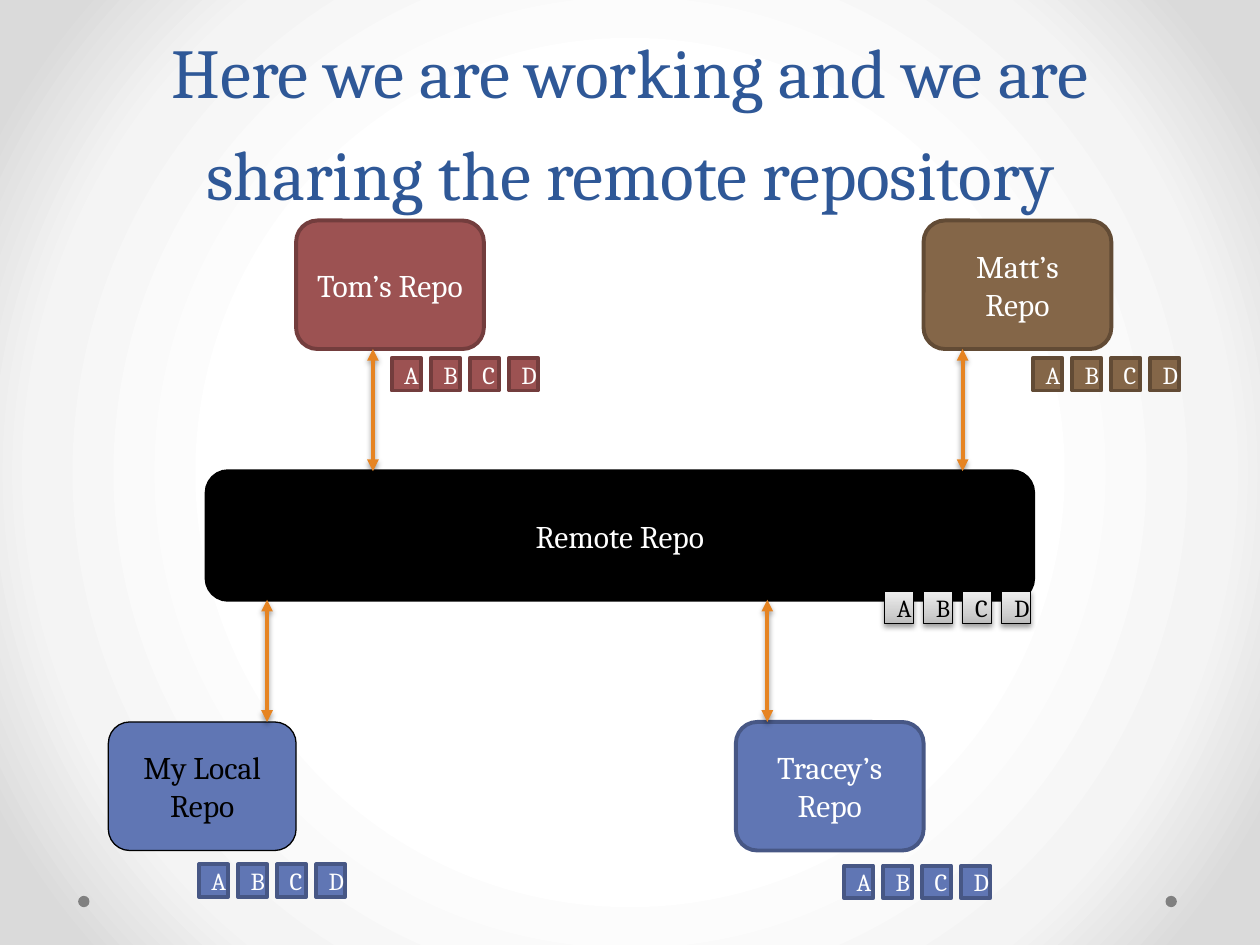
import lxml.etree
import pptx
import pptx.dml.color
import pptx.enum.shapes
import pptx.enum.text
import pptx.oxml.ns
import pptx.util

SHAPES = pptx.enum.shapes.MSO_SHAPE
WIDTH, HEIGHT = pptx.util.Inches(10), pptx.util.Inches(7.5)
COLUMNS, ROWS = 100, 75
REPO_W, REPO_H = 14.9, 10.2
REMOTE_BOX = (16.4, 37.4, 65.6, REPO_H)
COMMIT_W, COMMIT_H, COMMIT_STEP = 2.3, 2.6, 3.1
BLUE, RED, BROWN = ("6076B4", "475785"), ("9C5252", "733D3D"), ("846648", "624B35")
BLACK, WHITE, ORANGE = "000000", "FFFFFF", "E68422"
SILVER = [(0, "BDBDBD"), (35, "D1D1D1"), (100, "EEEEEE")]
BACKDROP = [(50, "FFFFFF"), (76, "F4F4F4"), (92, "DADADA")]


def across(columns):
    """Convert grid columns to a length."""
    return round(columns * WIDTH / COLUMNS)


def down(rows):
    """Convert grid rows to a length."""
    return round(rows * HEIGHT / ROWS)


def place(box):
    """Convert a grid box to left, top, width and height."""
    left, top, width, height = box
    return across(left), down(top), across(width), down(height)


def rgb(value):
    """Turn a hex string into a colour."""
    return pptx.dml.color.RGBColor.from_string(value)


def add_node(parent, tag, **attributes):
    """Append a drawing element with the given attributes."""
    node = lxml.etree.SubElement(parent, pptx.oxml.ns.qn(tag))
    for key, value in attributes.items():
        node.set(key, str(value))
    return node


def set_gradient(fill, owner, stops, angle=None):
    """Fill the owner with a linear gradient, or a circular one without an angle."""
    fill.gradient()
    gradient = owner.find(".//" + pptx.oxml.ns.qn("a:gradFill"))
    for child in list(gradient):
        gradient.remove(child)
    stop_list = add_node(gradient, "a:gsLst")
    for share, color in stops:
        add_node(add_node(stop_list, "a:gs", pos=share * 1000), "a:srgbClr", val=color)
    if angle is None:
        circle = add_node(gradient, "a:path", path="circle")
        add_node(circle, "a:fillToRect", l=50000, t=50000, r=50000, b=50000)
    else:
        add_node(gradient, "a:lin", ang=angle * 60000, scaled=0)


def add_shadow(part):
    """Drop a soft shadow below a shape or connector."""
    properties = part._element.spPr
    effects = properties.find(pptx.oxml.ns.qn("a:effectLst"))
    if effects is None:
        effects = add_node(properties, "a:effectLst")
    shadow = add_node(effects, "a:outerShdw", blurRad=pptx.util.Pt(3.1),
                      dist=pptx.util.Pt(1.6), dir=90 * 60000, rotWithShape=0)
    add_node(add_node(shadow, "a:srgbClr", val=BLACK), "a:alpha", val=38000)


def write(part, text, size=18, color=WHITE, anchor="MIDDLE", leading=None):
    """Write centred text into a shape or text box."""
    frame = part.text_frame
    frame.word_wrap = True
    frame.vertical_anchor = pptx.enum.text.MSO_ANCHOR[anchor]
    paragraph = frame.paragraphs[0]
    paragraph.alignment = pptx.enum.text.PP_ALIGN.CENTER
    if leading:
        paragraph.line_spacing = pptx.util.Pt(leading)
    run = paragraph.add_run()
    run.text = text
    run.font.name = "Cambria"
    run.font.size = pptx.util.Pt(size)
    run.font.color.rgb = rgb(color)


def add_block(slide, kind, box, fill, outline=None, weight=2.25):
    """Draw a preset shape with a flat or gradient fill."""
    block = slide.shapes.add_shape(kind, *place(box))
    block.shadow.inherit = False
    if isinstance(fill, str):
        block.fill.solid()
        block.fill.fore_color.rgb = rgb(fill)
    else:
        set_gradient(block.fill, block._element, fill, 270)
    if outline:
        block.line.color.rgb = rgb(outline)
        block.line.width = pptx.util.Pt(weight)
    else:
        block.line.fill.background()
    return block


def add_backdrop(slide):
    """Paint the background and the two corner dots."""
    set_gradient(slide.background.fill, slide._element, BACKDROP)
    for left in (6.2, 92.5):
        add_block(slide, SHAPES.OVAL, (left, 71.1, 0.9, 0.9), "808080")


def add_title(slide, box, text):
    """Write the slide title."""
    title = slide.shapes.add_textbox(*place(box))
    write(title, text, size=40, color="2F5897", anchor="BOTTOM", leading=58)


def add_commits(slide, left, top, fill, outline, weight=2.25, color=WHITE, shaded=False):
    """Draw the row of commits from a top left corner."""
    for index, letter in enumerate("ABCD"):
        box = (left + index * COMMIT_STEP, top, COMMIT_W, COMMIT_H)
        commit = add_block(slide, SHAPES.RECTANGLE, box, fill, outline, weight)
        write(commit, letter, size=14, color=color)
        if shaded:
            add_shadow(commit)


def add_sync_arrow(slide, column, start, end):
    """Draw a vertical double-headed arrow between two rows."""
    arrow = slide.shapes.add_connector(
        pptx.enum.shapes.MSO_CONNECTOR.STRAIGHT,
        across(column), down(start), across(column), down(end))
    arrow.line.color.rgb = rgb(ORANGE)
    arrow.line.width = pptx.util.Pt(2.25)
    line = arrow.line._get_or_add_ln()
    for end_tag in ("a:headEnd", "a:tailEnd"):
        add_node(line, end_tag, type="triangle")
    add_shadow(arrow)


def add_remote(slide, box):
    """Draw the shared repository with its commits."""
    left, top, _, _ = box
    remote = add_block(slide, SHAPES.ROUNDED_RECTANGLE, box, BLACK, BLACK)
    write(remote, "Remote Repo")
    add_commits(slide, left + 53.8, top + 9.5, SILVER, BLACK, 0.75, BLACK, True)


def add_repo(slide, box, name, palette, commit_offset, arrow_offset, own=False):
    """Draw a person's repository, its commits and its arrow to the remote."""
    left, top, _, height = box
    fill, outline = palette
    border, weight, color = (BLACK, 0.75, BLACK) if own else (outline, 2.25, WHITE)
    repo = add_block(slide, SHAPES.ROUNDED_RECTANGLE, box, fill, border, weight)
    write(repo, name, color=color)
    commit_left, commit_top = commit_offset
    add_commits(slide, left + commit_left, top + commit_top, fill, outline)
    _, remote_top, _, remote_height = REMOTE_BOX
    if top < remote_top:
        start, end = remote_top, top + height
    else:
        start, end = top, remote_top + remote_height
    add_sync_arrow(slide, left + arrow_offset, start, end)


def main():
    """Build the slide and save it."""
    deck = pptx.Presentation()
    deck.slide_width, deck.slide_height = WIDTH, HEIGHT
    slide = deck.slides.add_slide(deck.slide_layouts[6])
    add_backdrop(slide)
    add_title(slide, (5, 0, 90, 17.5),
              "Here we are working and we are sharing the remote repository")
    add_remote(slide, REMOTE_BOX)
    upper, lower = 17.5, 57.3
    repos = [
        (8.6, lower, "My Local Repo", BLUE, (7.2, 11.3), 12.6, True),
        (23.5, upper, "Tom’s Repo", RED, (7.6, 10.9), 6.1, False),
        (58.4, lower, "Tracey’s Repo", BLUE, (8.6, 11.4), 2.5, False),
        (73.3, upper, "Matt’s Repo", BROWN, (8.7, 10.9), 3.1, False),
    ]
    for left, top, *details in repos:
        add_repo(slide, (left, top, REPO_W, REPO_H), *details)
    deck.save("out.pptx")


if __name__ == "__main__":
    main()
